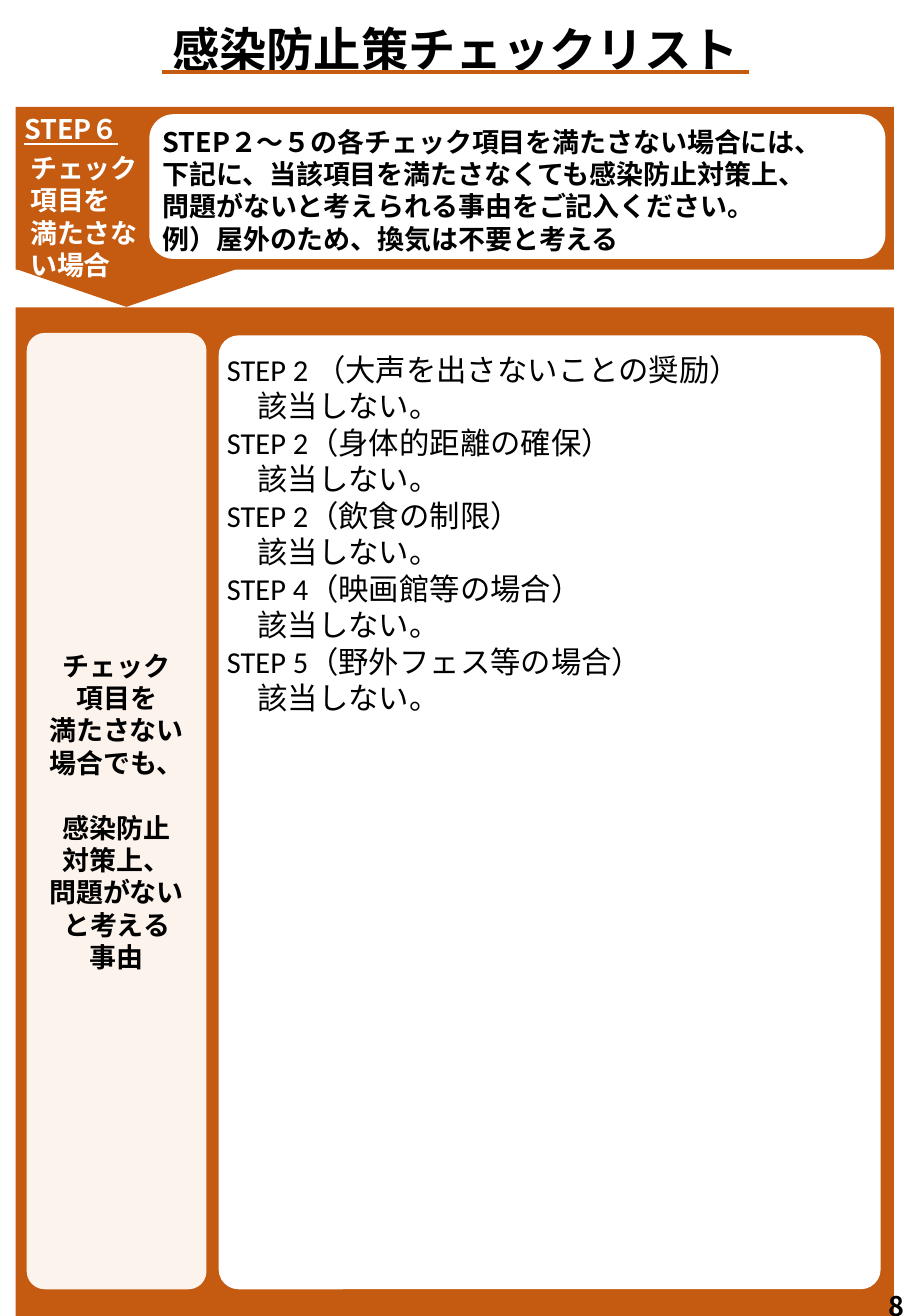
"""Build the STEP 6 page of an infection-prevention checklist."""
from lxml import etree
from pptx import Presentation
from pptx import util as u
from pptx.dml.color import RGBColor
from pptx.enum import shapes, text
from pptx.oxml.ns import qn

ORANGE, CREAM, WHITE, BLACK = "C55A11", "FDF3ED", "FFFFFF", "000000"
GOTHIC = "Noto Sans CJK JP"
Inches = u.Inches
KIND = shapes.MSO_SHAPE


def add_block(kind, box, fill):
    shape = slide.shapes.add_shape(kind, *map(Inches, box))
    shape.shadow.inherit = False
    shape.fill.solid()
    shape.fill.fore_color.rgb = RGBColor.from_string(fill)
    shape.line.fill.background()
    return shape


def write(shape, lines, size=16, color=BLACK, font=GOTHIC, align=text.PP_ALIGN.LEFT):
    frame = shape.text_frame
    frame.word_wrap = True
    frame.text = "\n".join(lines)
    for paragraph in frame.paragraphs:
        paragraph.alignment = align
        paragraph.line_spacing = u.Pt(size * 1.2)
        paragraph.font.size = u.Pt(size)
        paragraph.font.bold = font == GOTHIC
        paragraph.font.color.rgb = RGBColor.from_string(color)
        paragraph.font.name = font
        defaults = paragraph._p.get_or_add_pPr().get_or_add_defRPr()
        etree.SubElement(defaults, qn("a:ea")).set("typeface", GOTHIC)
    return frame


presentation = Presentation()
presentation.slide_width = Inches(7.5)
presentation.slide_height = Inches(10.83)
slide = presentation.slides.add_slide(presentation.slide_layouts[6])

title = slide.shapes.add_textbox(*map(Inches, (0.48, 0.12, 6.54, 0.57)))
write(title, ["感染防止策チェックリスト"], 28, align=text.PP_ALIGN.CENTER)
underline = slide.shapes.add_connector(
    shapes.MSO_CONNECTOR.STRAIGHT, Inches(1.33), Inches(0.59), Inches(6.17), Inches(0.59))
underline.line.color.rgb = RGBColor.from_string(ORANGE)
underline.line.width = u.Pt(2.25)
etree.SubElement(underline._element.spPr, qn("a:effectLst"))

pointer = add_block(KIND.PENTAGON, (0.73, 1.31, 0.62, 1.81), ORANGE)
pointer.rotation = 90
add_block(KIND.RECTANGLE, (0.13, 0.88, 7.23, 1.34), ORANGE)
add_block(KIND.ROUNDED_RECTANGLE, (1.23, 0.94, 6.06, 1.19), WHITE)

step_label = slide.shapes.add_textbox(*map(Inches, (0.1, 0.88, 1.19, 1.5)))
step_lines = write(
    step_label, ["STEP６", "チェック", "項目を", "満たさな", "い場合"], color=WHITE).paragraphs
step_lines[0].font.underline = True
step_lines[1].space_before = u.Pt(3.6)
for paragraph in step_lines[1:]:
    paragraph._p.get_or_add_pPr().set("marL", str(Inches(0.05)))

instructions = slide.shapes.add_textbox(*map(Inches, (1.24, 0.98, 6.14, 1.18)))
write(instructions, [
    "STEP２～５の各チェック項目を満たさない場合には、",
    "下記に、当該項目を満たさなくても感染防止対策上、",
    "問題がないと考えられる事由をご記入ください。",
    "例）屋外のため、換気は不要と考える",
])

add_block(KIND.RECTANGLE, (0.13, 2.53, 7.23, 8.3), ORANGE)
reason_label = add_block(KIND.ROUNDED_RECTANGLE, (0.22, 2.74, 1.48, 7.87), CREAM)
reason_label.adjustments[0] = 0.1
reason_frame = write(reason_label, [
    "チェック", "項目を", "満たさない", "場合でも、",
    "感染防止", "対策上、", "問題がない", "と考える", "事由",
], align=text.PP_ALIGN.CENTER)
reason_frame.vertical_anchor = text.MSO_ANCHOR.MIDDLE
reason_frame.margin_left = reason_frame.margin_right = Inches(0.07)
reason_frame.margin_top = reason_frame.margin_bottom = Inches(0.04)
reason_frame.paragraphs[4].space_before = u.Pt(19.2)

answer_panel = add_block(KIND.ROUNDED_RECTANGLE, (1.8, 2.76, 5.45, 7.85), WHITE)
answer_panel.adjustments[0] = 0.03

page_number = slide.shapes.add_textbox(*map(Inches, (7.22, 10.56, 0.28, 0.27)))
page_frame = write(page_number, ["8"])
page_frame.margin_right = page_frame.margin_bottom = 0

questions = [
    "STEP 2 （大声を出さないことの奨励）",
    "STEP 2（身体的距離の確保）",
    "STEP 2（飲食の制限）",
    "STEP 4（映画館等の場合）",
    "STEP 5（野外フェス等の場合）",
]
answers = slide.shapes.add_textbox(*map(Inches, (1.77, 2.84, 5.09, 3.74)))
answer_lines = [line for question in questions for line in (question, "該当しない。")]
answer_frame = write(answers, answer_lines, 18, font="Calibri")
for paragraph in answer_frame.paragraphs[1::2]:
    paragraph._p.get_or_add_pPr().set("marL", str(Inches(0.25)))

presentation.save("out.pptx")
